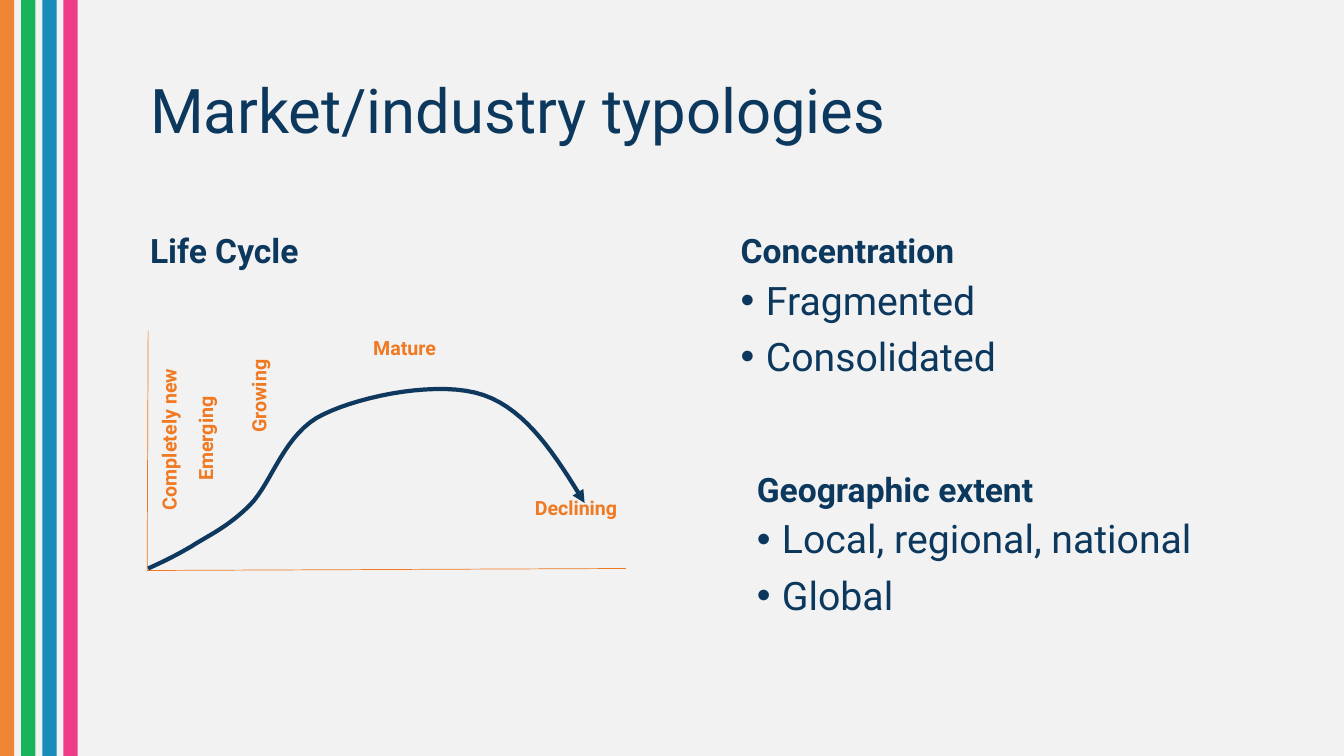
"""Build the market and industry typologies slide on a grid of 160 columns by 90 rows."""
import dataclasses
import typing

import lxml.etree
import pptx
import pptx.dml.color
import pptx.enum.shapes
import pptx.enum.text
import pptx.oxml.ns
import pptx.util

Point = tuple[float, float]
UNIT = pptx.util.Inches(1) / 12
COLUMNS, ROWS = 160, 90
NAVY, ORANGE, GREY = "0D385E", "F07921", "F2F2F2"
STRIPES = (ORANGE, "01AD4B", "0281B4", "EE297B")
STRIPE_WIDTH, STRIPE_PITCH = 1.7, 2.52
BLOCK_WIDTH, HEADING_HEIGHT, LIST_HEIGHT = 62.04, 10.8, 19.32
LABEL_HEIGHT = 4.08
CURVE_STEPS = 16

TITLE_FORMAT = {"size": pptx.util.Pt(44), "name": "Roboto"}
HEADING_FORMAT = {"size": pptx.util.Pt(24), "name": "Roboto", "bold": True}
ITEM_FORMAT = {"size": pptx.util.Pt(28), "name": "Roboto"}
LABEL_FORMAT = {"size": pptx.util.Pt(14), "name": "Roboto", "bold": True}
MIDDLE = pptx.enum.text.MSO_ANCHOR.MIDDLE
BOTTOM = pptx.enum.text.MSO_ANCHOR.BOTTOM
TOP = pptx.enum.text.MSO_ANCHOR.TOP


@dataclasses.dataclass(frozen=True)
class Section:
    left: float
    top: float
    heading: str
    items: tuple[str, ...] = ()


@dataclasses.dataclass(frozen=True)
class StageLabel:
    text: str
    center: Point
    width: float = 31.2
    rotation: float = 270


SECTIONS = (
    Section(16.68, 22.08, "Life Cycle"),
    Section(87, 22.08, "Concentration", ("Fragmented", "Consolidated")),
    Section(88.92, 50.52, "Geographic extent", ("Local, regional, national", "Global")),
)
STAGES = (
    StageLabel("Growing", (30.84, 47.16)),
    StageLabel("Emerging", (24.48, 52.2)),
    StageLabel("Completely new", (20.16, 52.32)),
    StageLabel("Mature", (48.18, 41.4), 28.44, 0),
    StageLabel("Declining", (68.58, 60.48), 28.44, 0),
)
AXIS_POINTS = ((17.64, 39.36), (17.52, 67.92), (74.52, 67.68))
CURVE_POINTS = (
    (17.64, 67.68),
    (19.2, 66.96), (20.76, 66.24), (22.8, 65.04),
    (24.84, 63.72), (27.12, 62.76), (29.76, 60.12),
    (32.4, 57.48), (33.84, 51.48), (38.52, 49.32),
    (43.2, 47.04), (52.44, 45.24), (57.6, 47.04),
    (62.76, 48.84), (66.24, 54.36), (69.6, 59.88),
)


def grid(*lengths: float) -> list[int]:
    return [round(length * UNIT) for length in lengths]


def color(value: str) -> pptx.dml.color.RGBColor:
    return pptx.dml.color.RGBColor.from_string(value)


def add_element(parent: typing.Any, tag: str, **attributes: str) -> None:
    lxml.etree.SubElement(parent, pptx.oxml.ns.qn(tag), attributes)


def set_format(paragraph: typing.Any, values: dict, hue: str) -> None:
    for name, value in values.items():
        setattr(paragraph.font, name, value)
    paragraph.font.color.rgb = color(hue)


def add_text(slide: typing.Any, box: tuple[float, ...], lines: tuple[str, ...], values: dict,
             anchor: typing.Any, hue: str = NAVY, bulleted: bool = False) -> typing.Any:
    shape = slide.shapes.add_textbox(*grid(*box))
    frame = shape.text_frame
    frame.word_wrap = True
    frame.vertical_anchor = anchor
    for index, line in enumerate(lines):
        paragraph = frame.paragraphs[0] if index == 0 else frame.add_paragraph()
        paragraph.text = line
        paragraph.line_spacing = 0.9
        if index:
            paragraph.space_before = pptx.util.Pt(10)
        if bulleted:
            properties = paragraph._p.get_or_add_pPr()
            indent = pptx.util.Inches(0.25)
            properties.set("marL", str(indent))
            properties.set("indent", str(-indent))
            add_element(properties, "a:buFont", typeface="Arial")
            add_element(properties, "a:buChar", char="•")
        set_format(paragraph, values, hue)
    return shape


def add_stripe(slide: typing.Any, index: int, hue: str) -> None:
    shape = slide.shapes.add_shape(pptx.enum.shapes.MSO_SHAPE.RECTANGLE,
                                   *grid(index * STRIPE_PITCH, 0, STRIPE_WIDTH, ROWS))
    shape.shadow.inherit = False
    shape.fill.solid()
    shape.fill.fore_color.rgb = color(hue)
    shape.line.fill.background()
    fill = shape._element.spPr.find(pptx.oxml.ns.qn("a:solidFill"))
    add_element(fill[0], "a:alpha", val="90000")


def add_section(slide: typing.Any, section: Section) -> None:
    add_text(slide, (section.left, section.top, BLOCK_WIDTH, HEADING_HEIGHT),
             (section.heading,), HEADING_FORMAT, BOTTOM)
    if section.items:
        add_text(slide, (section.left, section.top + HEADING_HEIGHT, BLOCK_WIDTH, LIST_HEIGHT),
                 section.items, ITEM_FORMAT, TOP, bulleted=True)


def add_axis(slide: typing.Any, start: Point, end: Point) -> None:
    connector = slide.shapes.add_connector(pptx.enum.shapes.MSO_CONNECTOR.STRAIGHT,
                                           *grid(*start, *end))
    connector.line.color.rgb = color(ORANGE)
    connector.line.width = pptx.util.Pt(0.5)
    add_element(connector._element.spPr, "a:effectLst")


def curve_vertices() -> list[Point]:
    vertices = []
    for first in range(0, len(CURVE_POINTS) - 1, 3):
        controls = CURVE_POINTS[first:first + 4]
        for step in range(1, CURVE_STEPS + 1):
            t = step / CURVE_STEPS
            weights = ((1 - t) ** 3, 3 * t * (1 - t) ** 2, 3 * t ** 2 * (1 - t), t ** 3)
            x, y = (sum(weight * point[axis] for weight, point in zip(weights, controls))
                    for axis in range(2))
            vertices.append((x * UNIT, y * UNIT))
    return vertices


def add_curve(slide: typing.Any) -> None:
    builder = slide.shapes.build_freeform(*grid(*CURVE_POINTS[0]))
    builder.add_line_segments(curve_vertices(), close=False)
    curve = builder.convert_to_shape()
    curve.shadow.inherit = False
    curve.fill.background()
    curve.line.color.rgb = color("0E385E")
    curve.line.width = pptx.util.Pt(3)
    add_element(curve.line._get_or_add_ln(), "a:tailEnd", type="triangle")


def add_stage(slide: typing.Any, stage: StageLabel) -> None:
    x, y = stage.center
    box = (x - stage.width / 2, y - LABEL_HEIGHT / 2, stage.width, LABEL_HEIGHT)
    shape = add_text(slide, box, (stage.text,), LABEL_FORMAT, TOP, ORANGE)
    shape.rotation = stage.rotation
    paragraph = shape.text_frame.paragraphs[0]
    paragraph.alignment = pptx.enum.text.PP_ALIGN.CENTER
    paragraph.line_spacing = 1.0


def main() -> None:
    presentation = pptx.Presentation()
    presentation.slide_width, presentation.slide_height = grid(COLUMNS, ROWS)
    slide = presentation.slides.add_slide(presentation.slide_layouts[6])
    slide.background.fill.solid()
    slide.background.fill.fore_color.rgb = color(GREY)
    for index, hue in enumerate(STRIPES):
        add_stripe(slide, index, hue)
    add_text(slide, (16.68, 4.8, 105.48, 17.4), ("Market/industry typologies",),
             TITLE_FORMAT, MIDDLE)
    for section in SECTIONS:
        add_section(slide, section)
    for start, end in zip(AXIS_POINTS, AXIS_POINTS[1:]):
        add_axis(slide, start, end)
    add_curve(slide)
    for stage in STAGES:
        add_stage(slide, stage)
    presentation.save("out.pptx")


if __name__ == "__main__":
    main()
